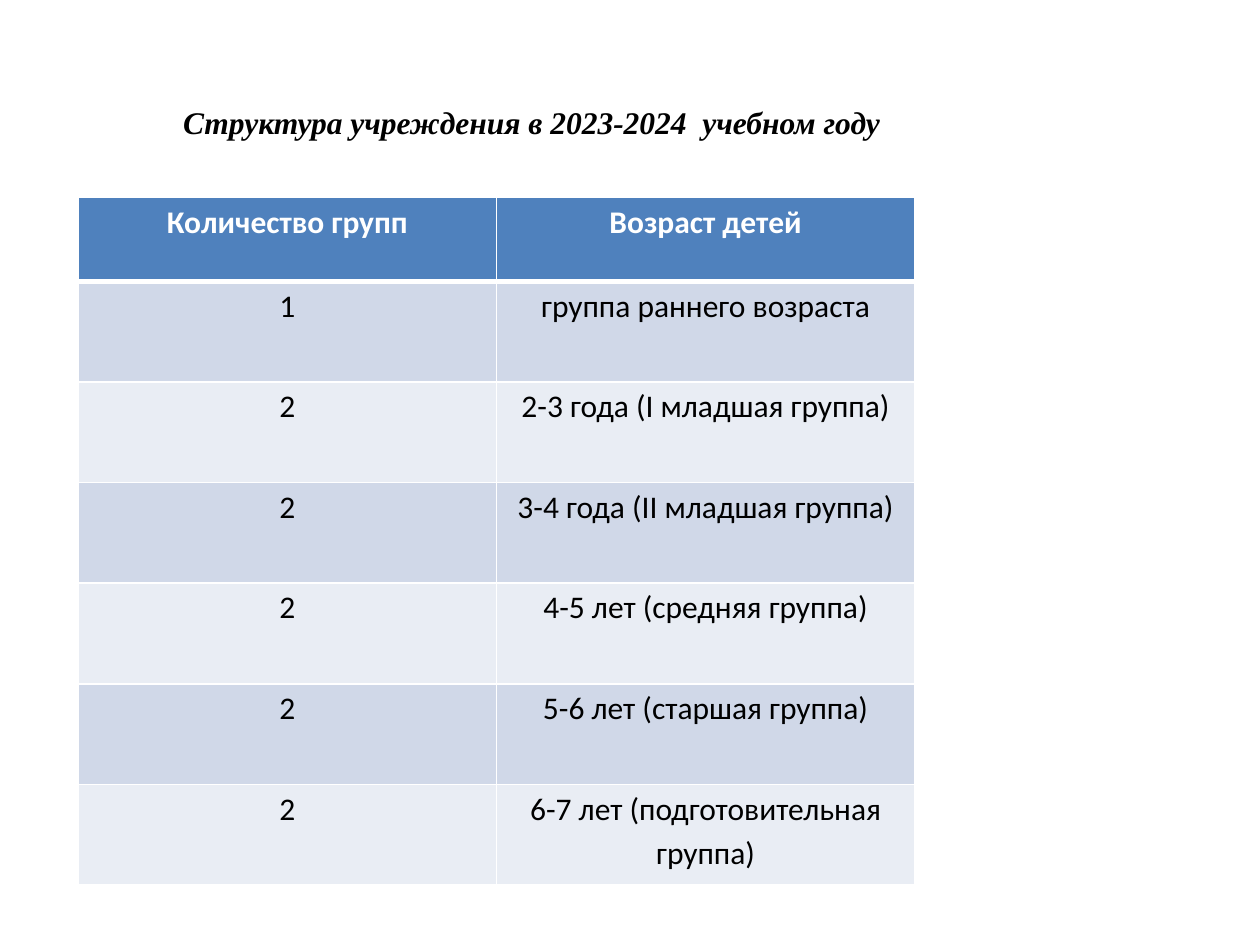
from lxml import etree
from pptx import Presentation
from pptx import util as u
from pptx.dml.color import RGBColor
from pptx.enum import text
from pptx.oxml import ns

# Content
TITLE = "Структура учреждения в 2023-2024  учебном году"
HEADER = ("Количество групп", "Возраст детей")
GROUPS = [
    ("1", "группа раннего возраста"),
    ("2", "2-3 года (I младшая группа)"),
    ("2", "3-4 года (II младшая группа)"),
    ("2", "4-5 лет (средняя группа)"),
    ("2", "5-6 лет (старшая группа)"),
    ("2", "6-7 лет (подготовительная группа)"),
]

# Style and measures
COLORS = {
    "header": "4F81BD",
    "odd": "D0D8E8",
    "even": "E9EDF4",
    "white": "FFFFFF",
    "black": "000000",
}
FONT_SIZE = u.Pt(18)
COLUMN_WIDTH = u.Cm(8.43)
HEADER_HEIGHT = u.Cm(1.7)
ROW_HEIGHT = u.Cm(2.03)


def write(paragraph, content, font_name, color, bold=False, italic=False):
    """Add one centred run to a paragraph."""
    paragraph.alignment = text.PP_ALIGN.CENTER
    run = paragraph.add_run()
    run.text = content
    run.font.name = font_name
    run.font.size = FONT_SIZE
    run.font.bold = bold
    run.font.italic = italic
    run.font.color.rgb = RGBColor.from_string(COLORS[color])


def set_borders(cell, widths):
    """Draw white borders; widths in points are keyed by side."""
    properties = cell._tc.get_or_add_tcPr()
    for position, (side, points) in enumerate(widths.items()):
        line = etree.Element(ns.qn(f"a:ln{side}"), w=str(u.Pt(points)))
        fill = etree.SubElement(line, ns.qn("a:solidFill"))
        etree.SubElement(fill, ns.qn("a:srgbClr"), val=COLORS["white"])
        properties.insert(position, line)


def add_title(slide):
    box = slide.shapes.add_textbox(u.Cm(1.98), u.Cm(0.76), u.Cm(17.48), u.Cm(3.4))
    frame = box.text_frame
    frame.word_wrap = True
    frame.vertical_anchor = text.MSO_ANCHOR.MIDDLE
    write(frame.paragraphs[0], TITLE, "Times New Roman", "black", bold=True, italic=True)


def add_groups_table(slide):
    rows = [HEADER] + GROUPS
    height = HEADER_HEIGHT + ROW_HEIGHT * len(GROUPS)
    table = slide.shapes.add_table(
        len(rows), len(HEADER), u.Cm(1.58), u.Cm(3.97),
        COLUMN_WIDTH * len(HEADER), height).table
    for column in table.columns:
        column.width = COLUMN_WIDTH

    for row_index, values in enumerate(rows):
        is_header = row_index == 0
        table.rows[row_index].height = HEADER_HEIGHT if is_header else ROW_HEIGHT
        band = "header" if is_header else "odd" if row_index % 2 else "even"
        for column_index, value in enumerate(values):
            cell = table.cell(row_index, column_index)
            cell.fill.solid()
            cell.fill.fore_color.rgb = RGBColor.from_string(COLORS[band])
            set_borders(cell, {"L": 1, "R": 1,
                               "T": 3 if row_index == 1 else 1,
                               "B": 3 if is_header else 1})
            paragraph = cell.text_frame.paragraphs[0]
            if not is_header:
                cell.margin_left = cell.margin_right = u.Cm(0.18)
                cell.margin_top = cell.margin_bottom = 0
                paragraph.line_spacing = 1.15
            write(paragraph, value, "Calibri",
                  "white" if is_header else "black", bold=is_header)


def main():
    presentation = Presentation()
    presentation.slide_width = u.Cm(25.4)
    presentation.slide_height = u.Cm(19.05)
    slide = presentation.slides.add_slide(presentation.slide_layouts[6])
    add_title(slide)
    add_groups_table(slide)
    presentation.save("out.pptx")


if __name__ == "__main__":
    main()
